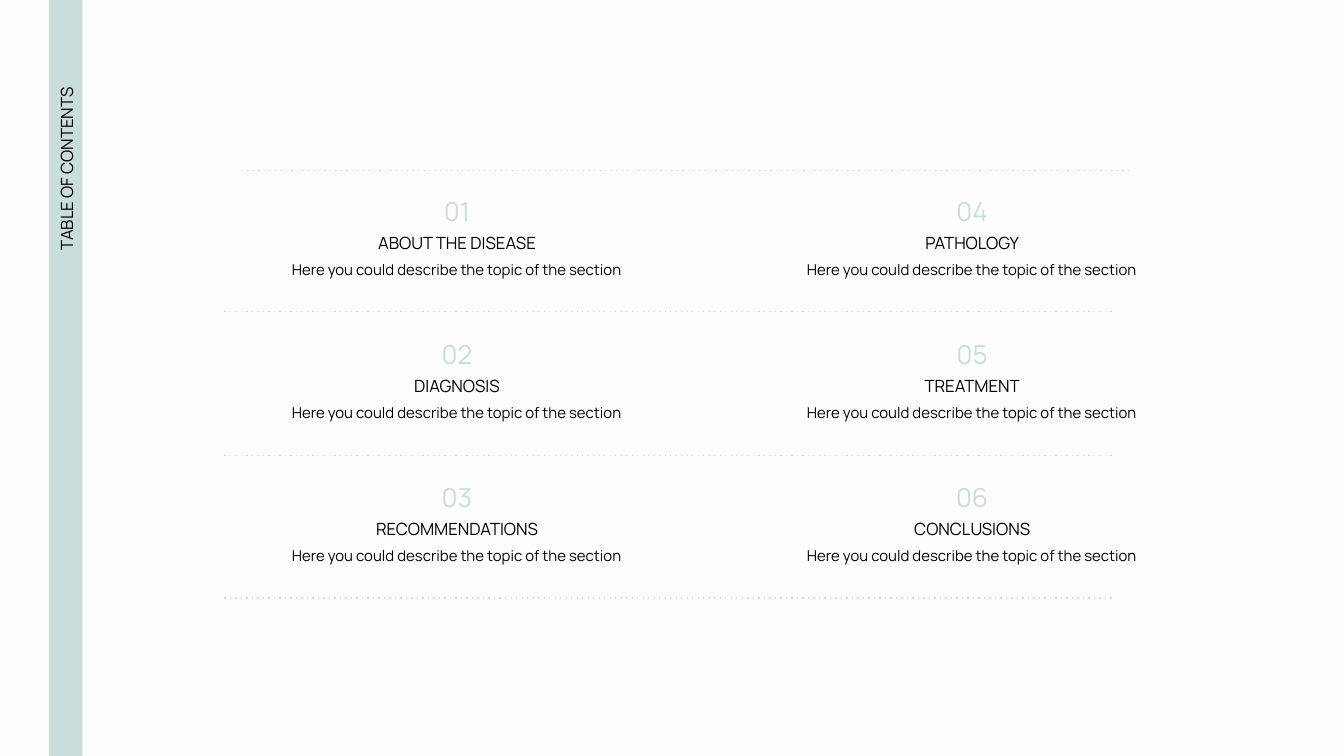
from lxml.etree import SubElement
from pptx import Presentation
from pptx.dml.color import RGBColor
from pptx.enum.dml import MSO_LINE
from pptx.enum.shapes import MSO_CONNECTOR, MSO_SHAPE
from pptx.enum.text import MSO_ANCHOR, PP_ALIGN
from pptx.oxml.ns import qn
from pptx.util import Pt

# Content
HEAD = "TABLE OF CONTENTS"
NOTE = "Here you could describe the topic of the section"
COLS = [
    ["ABOUT THE DISEASE", "DIAGNOSIS", "RECOMMENDATIONS"],
    ["PATHOLOGY", "TREATMENT", "CONCLUSIONS"],
]

# Style
FONT = "Manrope"
PALE = RGBColor(0xCA, 0xDC, 0xDC)
BLACK = RGBColor(0, 0, 0)
PAPER = RGBColor(0xFD, 0xFD, 0xFD)

# Layout, in points
MIDS = [244.8, 520.8]  # column centres
TOP, STEP = 100.8, 76.6  # first row and row pitch
RULES = [(129.6, 91.4), (120.2, 167), (120.2, 244.1), (120.2, 320.4)]
SPAN = 475.9

prs = Presentation()
prs.slide_width, prs.slide_height = Pt(720), Pt(405)
slide = prs.slides.add_slide(prs.slide_layouts[6])
slide.background.fill.solid()
slide.background.fill.fore_color.rgb = PAPER


def add_text(text, mid, top, width, height, size, color=BLACK,
             anchor=MSO_ANCHOR.MIDDLE, align=PP_ALIGN.CENTER):
    box = slide.shapes.add_textbox(
        Pt(mid - width / 2), Pt(top), Pt(width), Pt(height))
    frame = box.text_frame
    frame.word_wrap = True
    frame.vertical_anchor = anchor
    frame.margin_left = frame.margin_right = Pt(7.2)
    frame.margin_top = frame.margin_bottom = Pt(7.2)
    para = frame.paragraphs[0]
    para.text = text
    para.alignment = align
    para.font.name, para.font.size = FONT, Pt(size)
    para.font.color.rgb = color
    return box


# Side band and its upright heading
band = slide.shapes.add_shape(
    MSO_SHAPE.RECTANGLE, Pt(26.2), Pt(-3.6), Pt(18), Pt(412.6))
band.shadow.inherit = False
band.fill.solid()
band.fill.fore_color.rgb = PALE
band.line.fill.background()
head = add_text(HEAD, 35.6, 200.9, 339.1, 16.6, 9, align=PP_ALIGN.RIGHT)
head.rotation = 270

# Sections, numbered down each column
for col, (mid, names) in enumerate(zip(MIDS, COLS)):
    for row, name in enumerate(names):
        top = TOP + row * STEP
        num = col * len(names) + row + 1
        note = add_text(NOTE, mid, top + 31.7, 226.8, 25.2, 8,
                        anchor=MSO_ANCHOR.TOP)
        para = note.text_frame.paragraphs[0]
        para.line_spacing, para.space_after = 1.15, Pt(16)
        add_text(name, mid, top + 16.6, 253.4, 25.2, 9)
        add_text(f"{num:02}", mid, top, 44.6, 28.1, 14, PALE,
                 MSO_ANCHOR.BOTTOM)

# Dotted rules between the rows
for left, y in RULES:
    rule = slide.shapes.add_connector(
        MSO_CONNECTOR.STRAIGHT, Pt(left), Pt(y), Pt(left + SPAN), Pt(y))
    rule.line.color.rgb = PALE
    rule.line.width = Pt(0.75)
    rule.line.dash_style = MSO_LINE.ROUND_DOT
    for dash in rule._element.iter(qn("a:prstDash")):
        dash.set("val", "dot")
    SubElement(rule._element.spPr, qn("a:effectLst"))

prs.save("out.pptx")
